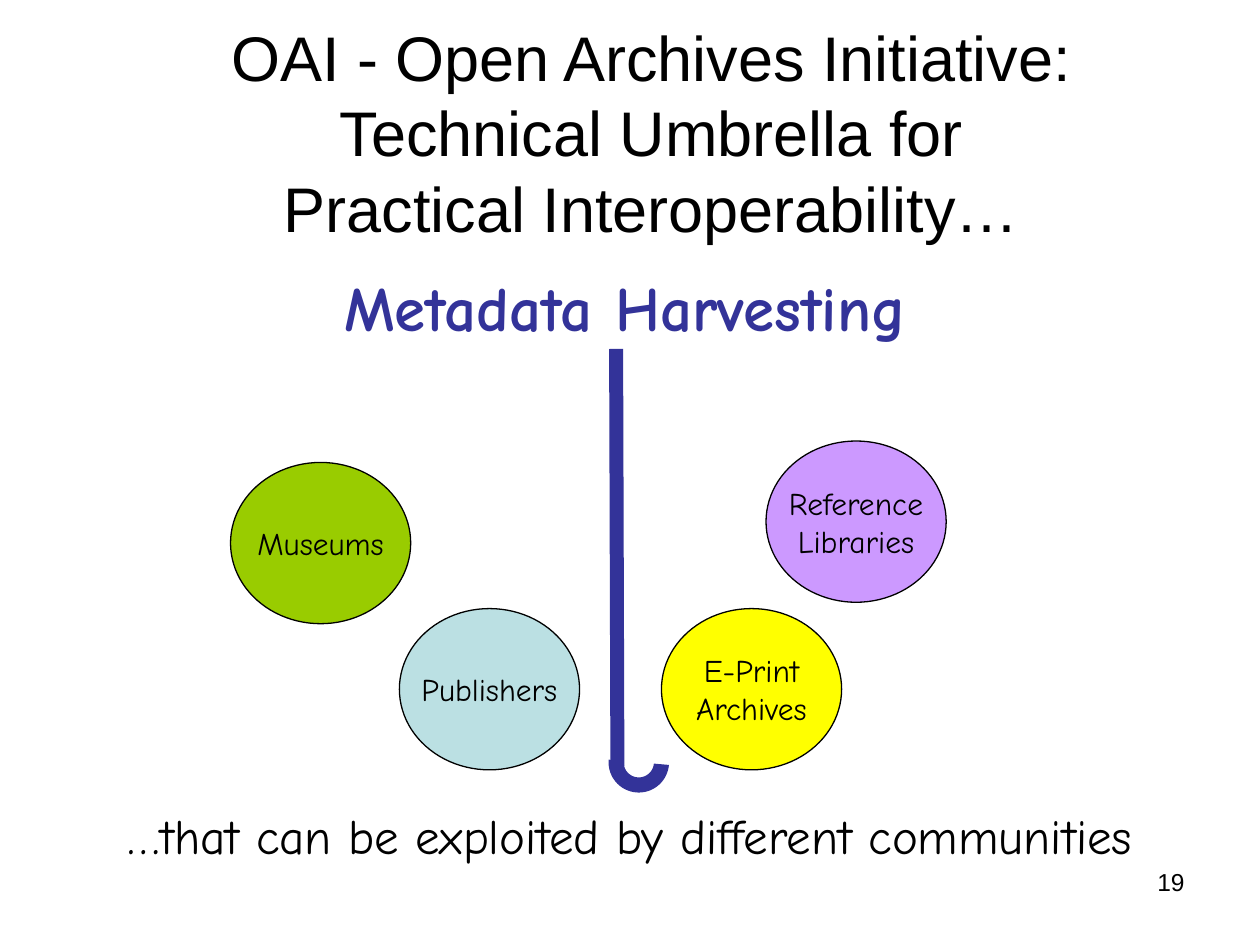
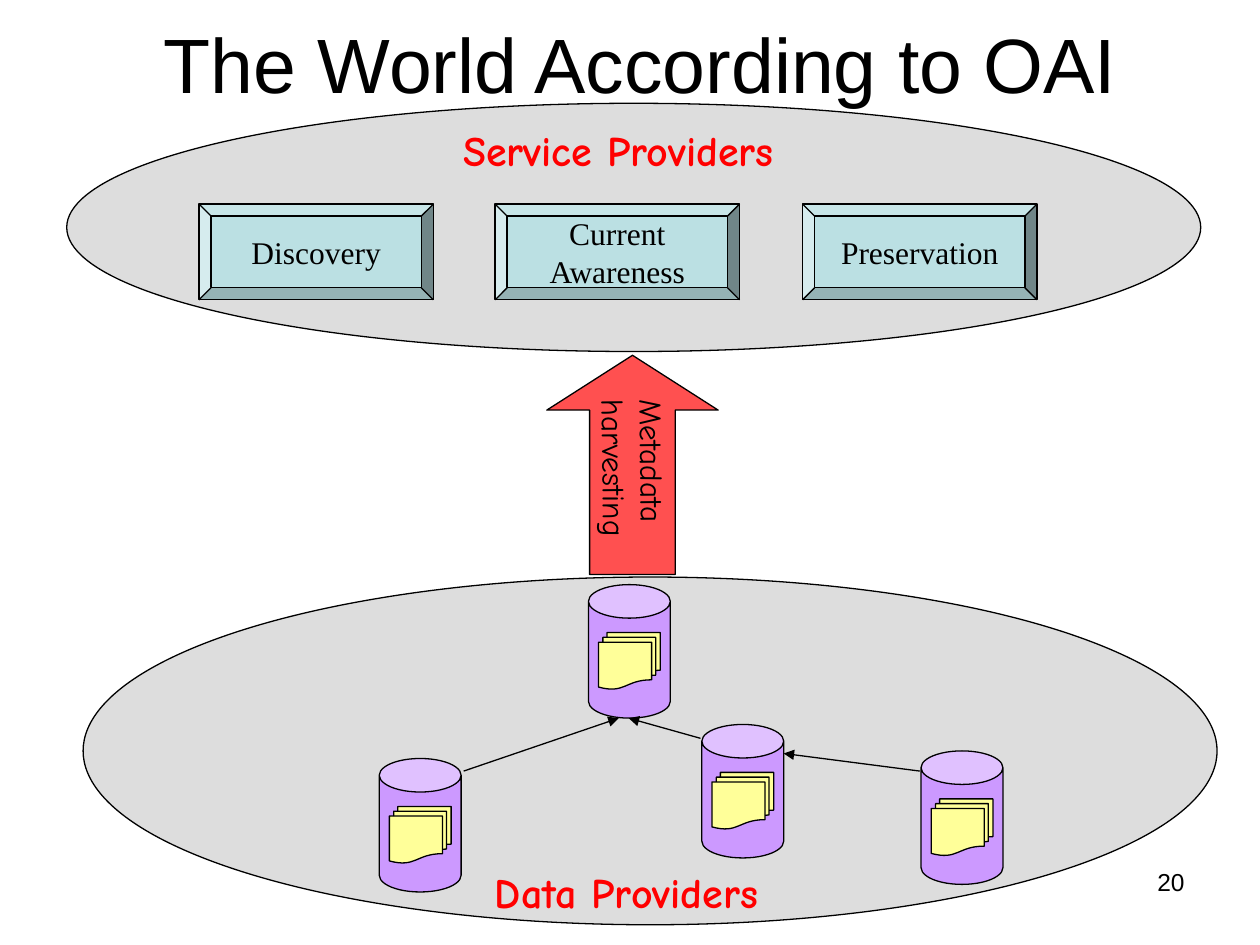
import math
from pptx import Presentation, util as u
from pptx.dml.color import RGBColor
from pptx.enum import shapes, text
from pptx.oxml.ns import qn
from lxml import etree

BLACK, NAVY, RED = "000000", "333399", "FF0000"
TEAL, LILAC, GREY = "BBE0E3", "CC99FF", "DDDDDD"
SANS, HAND, SERIF = "Arial", "Comic Neue", "Times New Roman"
MSO = shapes.MSO_SHAPE
LEFT, CENTER, RIGHT = text.PP_ALIGN.LEFT, text.PP_ALIGN.CENTER, text.PP_ALIGN.RIGHT
TOP, MIDDLE = text.MSO_ANCHOR.TOP, text.MSO_ANCHOR.MIDDLE
rgb = RGBColor.from_string


def add(s, kind, box, fill=None, words="", size=18, font=HAND, color=BLACK,
        bold=False, align=CENTER, anchor=MIDDLE, wrap=False):
    """Add a preset shape with a thin outline, or a text box if kind is None."""
    box = [u.Inches(v) for v in box]
    if kind is None:
        sp = s.shapes.add_textbox(*box)
    else:
        sp = s.shapes.add_shape(kind, *box)
        sp.shadow.inherit = False
        sp.fill.solid()
        sp.fill.fore_color.rgb = rgb(fill)
        sp.line.color.rgb = rgb(BLACK)
        sp.line.width = u.Pt(0.75)
    if words:
        tf = sp.text_frame
        tf.text = words
        tf.word_wrap = wrap
        tf.vertical_anchor = anchor
        for p in tf.paragraphs:
            p.alignment = align
            for r in p.runs:
                r.font.size, r.font.name, r.font.bold = u.Pt(size), font, bold
                r.font.color.rgb = rgb(color)
    return sp


def add_line(s, start, end, color=BLACK, width=0.75, arrow=False):
    c = s.shapes.add_connector(shapes.MSO_CONNECTOR.STRAIGHT,
                               *[u.Inches(v) for v in (*start, *end)])
    c.line.color.rgb = rgb(color)
    c.line.width = u.Pt(width)
    if arrow:
        etree.SubElement(c.line._get_or_add_ln(), qn("a:tailEnd"), type="triangle")
    etree.SubElement(c._element.spPr, qn("a:effectLst"))


prs = Presentation()
prs.slide_width, prs.slide_height = u.Inches(10), u.Inches(7.5)
slides = []
for number in (19, 20):
    s = prs.slides.add_slide(prs.slide_layouts[6])
    add(s, None, (7.17, 6.83, 2.33, 0.52), words=str(number), size=14, font=SANS,
        align=RIGHT, anchor=TOP, wrap=True)
    slides.append(s)
umbrella, world = slides

# Slide 19: the umbrella and its communities
add(umbrella, None, (0.67, 0.42, 9, 1.25), size=36, font=SANS, wrap=True,
    words="OAI - Open Archives Initiative: Technical Umbrella for\vPractical Interoperability…")
add(umbrella, None, (0.5, 2.08, 8.92, 3.92), words="Metadata Harvesting",
    size=36, color=NAVY, bold=True, anchor=TOP)

add_line(umbrella, (4.89, 2.77), (4.9, 6.08), NAVY, 8)
cx, cy, outer, inner = 5.07, 6.05, 0.24, 0.12
angles = [math.radians(a) for a in range(5, 186, 5)]
points = [(u.Inches(cx + radius * math.cos(a)), u.Inches(cy + radius * math.sin(a)))
          for radius, sweep in ((outer, angles), (inner, angles[::-1])) for a in sweep]
fb = umbrella.shapes.build_freeform(*points[0])
fb.add_line_segments(points[1:], close=True)
handle = fb.convert_to_shape()
handle.shadow.inherit = False
handle.fill.solid()
handle.fill.fore_color.rgb = rgb(NAVY)
handle.line.fill.background()

for left, top, fill, name in (
        (6.08, 3.5, LILAC, "Reference\nLibraries"),
        (3.17, 4.83, TEAL, "Publishers"),
        (5.25, 4.83, "FFFF00", "E-Print\vArchives"),
        (1.83, 3.67, "99CC00", "Museums")):
    add(umbrella, MSO.OVAL, (left, top, 1.43, 1.28), fill, name)
add(umbrella, None, (0.25, 6, 9.5, 1.25), size=28, wrap=True,
    words="…that can be exploited by different communities")

# Slide 20: service providers above, data providers below
add(world, MSO.OVAL, (0.66, 4.58, 9, 2.76), GREY)
add(world, MSO.OVAL, (0.53, 0.82, 9, 1.97), GREY)

for left, top in ((3.01, 6.02), (4.67, 4.64), (5.57, 5.75), (7.31, 5.96)):
    can = add(world, MSO.CAN, (left, top, 0.65, 1.06), LILAC)
    can.adjustments[0] = 0.41
    add(world, MSO.FLOWCHART_MULTIDOCUMENT, (left + 0.08, top + 0.38, 0.49, 0.45), "FFFF99")

for left, width, service in ((1.58, 1.86, "Discovery"),
                             (3.93, 1.94, "Current\nAwareness"),
                             (6.37, 1.86, "Preservation")):
    bevel = add(world, MSO.BEVEL, (left, 1.62, width, 0.76), TEAL, service, font=SERIF)
    bevel.adjustments[0] = 0.125

for box, label in (((3.58, 0.94, 3.04, 0.49), "Service Providers"),
                   ((3.83, 6.83, 2.61, 0.5), "Data Providers")):
    add(world, None, box, words=label, size=24, color=RED, bold=True,
        align=LEFT, anchor=TOP)

arrow = add(world, MSO.UP_ARROW, (4.34, 2.82, 1.36, 1.74), "FF5050")
arrow.adjustments[1] = 0.32
label = add(world, None, (4.32, 3.43, 1.42, 0.7), words="Metadata\nharvesting",
            align=LEFT, anchor=TOP)
label.rotation = 89.3

add(world, None, (0.5, 0, 9.17, 0.99), words="The World According to OAI",
    size=44, font=SANS, wrap=True)

for start, end in (((3.68, 6.12), (4.91, 5.7)),
                   ((7.3, 6.12), (6.22, 5.98)),
                   ((5.56, 5.86), (4.99, 5.7))):
    add_line(world, start, end, arrow=True)

prs.save("out.pptx")
